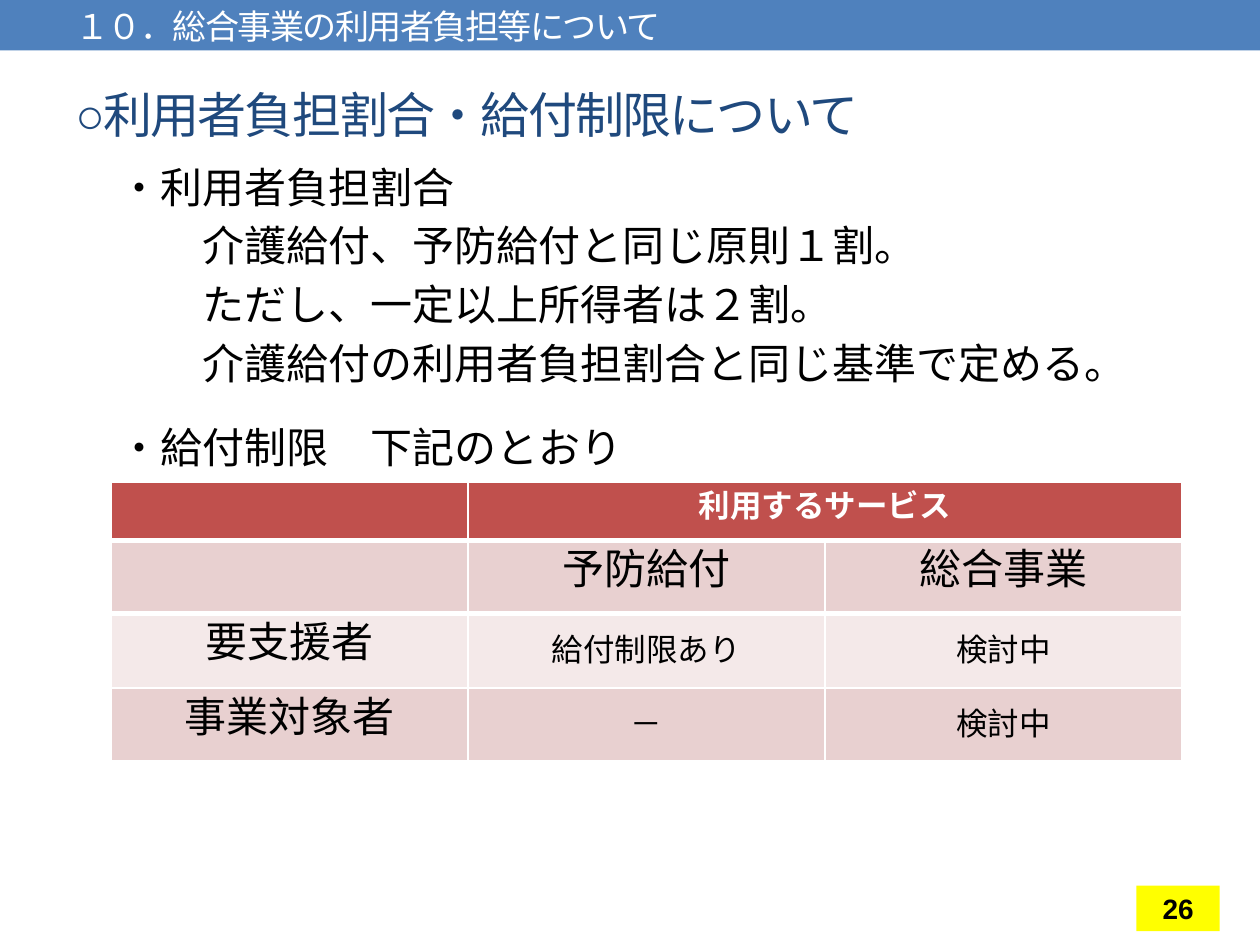
"""Build the slide on user charges and benefit limits."""
from lxml import etree
from pptx import Presentation
from pptx.dml.color import RGBColor
from pptx.enum.shapes import MSO_SHAPE
from pptx.enum.text import MSO_ANCHOR, PP_ALIGN
from pptx.oxml.ns import qn
from pptx.util import Inches, Pt

BLUE = RGBColor(0x4F, 0x81, 0xBD)
NAVY = RGBColor(0x1F, 0x49, 0x7D)
RED = RGBColor(0xC0, 0x50, 0x4D)
PINK = RGBColor(0xE8, 0xD0, 0xD0)
PALE = RGBColor(0xF4, 0xE9, 0xE9)
YELLOW = RGBColor(0xFF, 0xFF, 0x00)
WHITE = RGBColor(0xFF, 0xFF, 0xFF)
BLACK = RGBColor(0, 0, 0)


def style(p, size, color, bold=False, spacing=None):
    for r in p.runs:
        r.font.name = "Arial"
        r.font.size = Pt(size)
        r.font.bold = bold
        r.font.color.rgb = color
        rPr = r._r.get_or_add_rPr()
        etree.SubElement(rPr, qn("a:ea")).set("typeface", "Arial")
        if spacing is not None:
            rPr.set("spc", str(spacing))


def add_box(s, x, y, w, h, fill=None):
    box = [Inches(v) for v in (x, y, w, h)]
    if fill is None:
        sp = s.shapes.add_textbox(*box)
    else:
        sp = s.shapes.add_shape(MSO_SHAPE.RECTANGLE, *box)
        sp.shadow.inherit = False
        sp.fill.solid()
        sp.fill.fore_color.rgb = fill
        sp.line.fill.background()
    sp.text_frame.word_wrap = True
    sp.text_frame.vertical_anchor = MSO_ANCHOR.MIDDLE
    return sp


prs = Presentation()
prs.slide_width, prs.slide_height = Inches(10), Inches(7.5)
s = prs.slides.add_slide(prs.slide_layouts[6])

add_box(s, 0, 0, 10, 0.4, BLUE)

title = add_box(s, 0.5, 0.58, 9, 0.65)
title.text_frame.text = "○利用者負担割合・給付制限について"
style(title.text_frame.paragraphs[0], 28, NAVY, spacing=-100)

body = add_box(s, 0.51, 1.23, 9, 4.68)
tf = body.text_frame
tf.vertical_anchor = MSO_ANCHOR.TOP
lines = [
    ("・利用者負担割合", 0.33, 4.8),
    ("介護給付、予防給付と同じ原則１割。", 1, 4.8),
    ("ただし、一定以上所得者は２割。", 1, 4.8),
    ("介護給付の利用者負担割合と同じ基準で定める。", 1, 4.8),
    ("・給付制限　下記のとおり", 0.33, 19.2),
]
tf.text = "\n".join(text for text, _, _ in lines)
for p, (_, indent, before) in zip(tf.paragraphs, lines):
    p._p.get_or_add_pPr().set("marL", str(Inches(indent)))
    p.space_before = Pt(before)
    style(p, 24, BLACK)

rows = [
    ("", "利用するサービス", ""),
    ("", "予防給付", "総合事業"),
    ("要支援者", "給付制限あり", "検討中"),
    ("事業対象者", "－", "検討中"),
]
fills = [RED, PINK, PALE, PINK]
heights = [0.46, 0.58, 0.59, 0.58]
table = s.shapes.add_table(4, 3, Inches(0.88), Inches(3.83), Inches(8.5), Inches(sum(heights))).table
table.cell(0, 1).merge(table.cell(0, 2))
for i, texts in enumerate(rows):
    table.rows[i].height = Inches(heights[i])
    for j, text in enumerate(texts):
        cell = table.cell(i, j)
        if i < 2:
            edge = etree.SubElement(cell._tc.get_or_add_tcPr(), qn("a:lnB" if i == 0 else "a:lnT"))
            edge.set("w", str(Pt(3)))
            fill = etree.SubElement(edge, qn("a:solidFill"))
            etree.SubElement(fill, qn("a:srgbClr")).set("val", str(WHITE))
        cell.fill.solid()
        cell.fill.fore_color.rgb = fills[i]
        if not text:
            continue
        cell.text_frame.text = text
        p = cell.text_frame.paragraphs[0]
        p.alignment = PP_ALIGN.CENTER
        label = i == 1 or j == 0
        style(p, 24 if label else 18, WHITE if i == 0 else BLACK, bold=i == 0)
        if i > 1 and j > 0:
            cell.vertical_anchor = MSO_ANCHOR.MIDDLE

number = add_box(s, 9.02, 7.03, 0.66, 0.36, YELLOW)
number.text_frame.text = "26"
p = number.text_frame.paragraphs[0]
p.alignment = PP_ALIGN.CENTER
style(p, 16, BLACK, bold=True)

header = add_box(s, 0.5, 0, 9, 0.41)
header.text_frame.text = "１０．総合事業の利用者負担等について"
style(header.text_frame.paragraphs[0], 19.5, WHITE, spacing=-100)

prs.save("out.pptx")
